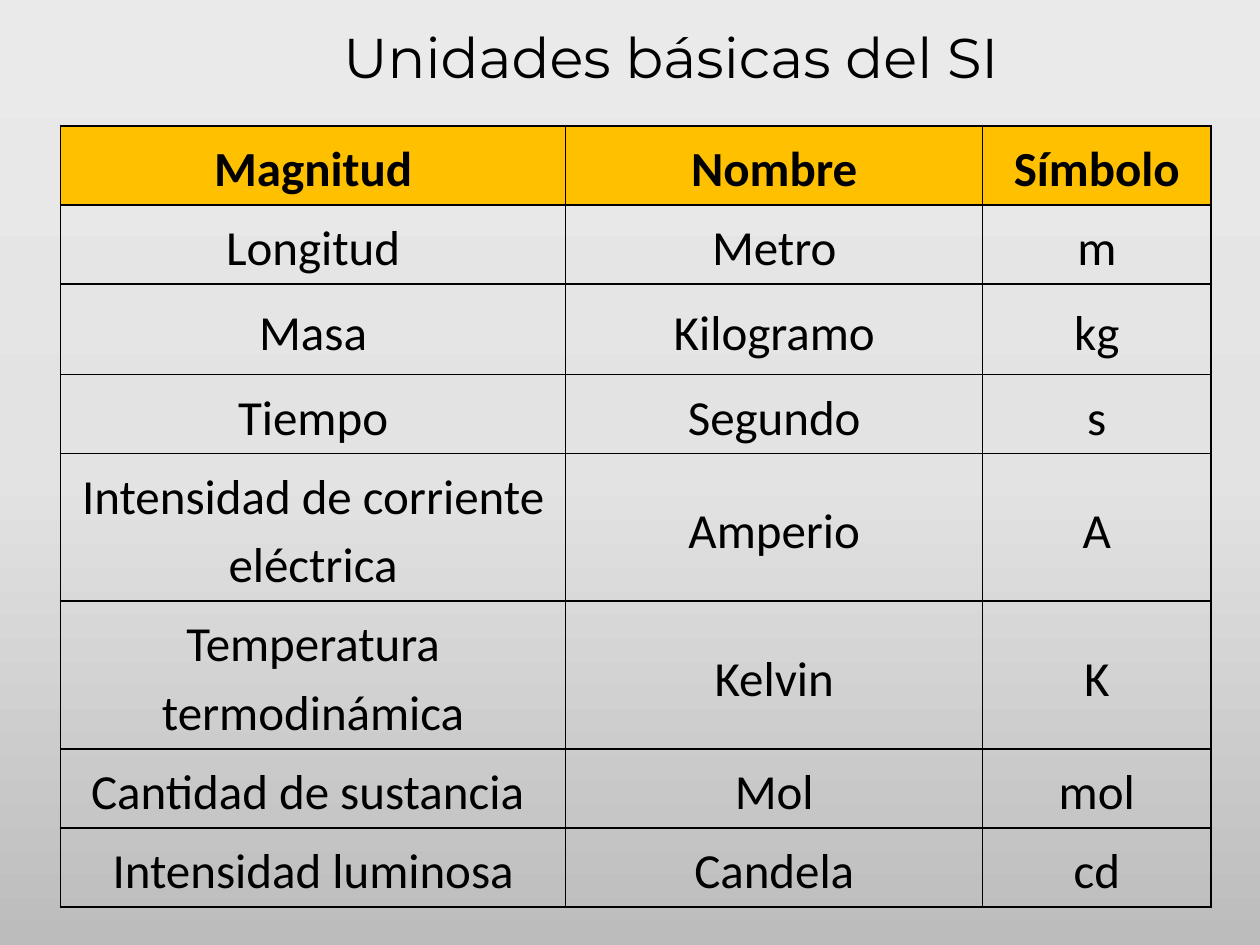
from copy import deepcopy
from typing import NamedTuple

from lxml.etree import SubElement
from pptx import Presentation
from pptx.dml.color import RGBColor
from pptx.enum.text import MSO_ANCHOR, PP_ALIGN
from pptx.oxml.ns import qn
from pptx.util import Inches, Pt

SLIDE_WIDTH, SLIDE_HEIGHT = Inches(10), Inches(7.5)
BLACK, AMBER = "000000", "FFC000"
BACKDROP = [(0, "EBEAEA"), (0.5, "E4E3E3"), (1, "BDBCBC")]
COLUMN_WIDTHS = [4.01, 3.31, 1.81]
SINGLE_ROW, TALL_ROW, DOUBLE_ROW = 0.62, 0.72, 1.16


class Unit(NamedTuple):
    quantity: str
    name: str
    symbol: str
    height: float = SINGLE_ROW


HEADING = Unit("Magnitud", "Nombre", "Símbolo")
UNITS = [
    Unit("Longitud", "Metro", "m"),
    Unit("Masa", "Kilogramo", "kg", TALL_ROW),
    Unit("Tiempo", "Segundo", "s"),
    Unit("Intensidad de corriente eléctrica", "Amperio", "A", DOUBLE_ROW),
    Unit("Temperatura termodinámica", "Kelvin", "K", DOUBLE_ROW),
    Unit("Cantidad de sustancia ", "Mol", "mol"),
    Unit("Intensidad luminosa", "Candela", "cd"),
]


def rgb(value: str) -> RGBColor:
    return RGBColor.from_string(value)


def paint_background(slide) -> None:
    fill = slide.background.fill
    fill.gradient()
    fill.gradient_angle = 270
    stop_list = next(slide.element.iter(qn("a:gsLst")))
    stop_list.append(deepcopy(stop_list[-1]))
    for stop, (position, color) in zip(fill.gradient_stops, BACKDROP):
        stop.position = position
        stop.color.rgb = rgb(color)


def style_text(paragraph, font_name: str, size: int, bold: bool = False) -> None:
    paragraph.alignment = PP_ALIGN.CENTER
    for run in paragraph.runs:
        run.font.name = font_name
        run.font.size = Pt(size)
        run.font.bold = bold
        run.font.color.rgb = rgb(BLACK)


def add_title(slide, title: str) -> None:
    box = slide.shapes.add_textbox(
        Inches(1.28), Inches(0.13), Inches(8.21), Inches(0.64)
    )
    box.text_frame.word_wrap = True
    box.text_frame.text = title
    style_text(box.text_frame.paragraphs[0], "Montserrat", 32)


def add_borders(cell) -> None:
    properties = cell._tc.get_or_add_tcPr()
    for side in ("lnL", "lnR", "lnT", "lnB"):
        line = SubElement(properties, qn(f"a:{side}"), w=str(Pt(1)))
        fill = SubElement(line, qn("a:solidFill"))
        SubElement(fill, qn("a:srgbClr"), val=BLACK)


def fill_cell(cell, text: str, is_heading: bool) -> None:
    cell.text_frame.text = text
    cell.vertical_anchor = MSO_ANCHOR.MIDDLE
    cell.margin_left = cell.margin_right = Inches(0.04)
    cell.margin_top = cell.margin_bottom = Inches(0.04)
    paragraph = cell.text_frame.paragraphs[0]
    paragraph.line_spacing = 1.15
    paragraph.space_after = Pt(10)
    style_text(paragraph, "Calibri", 28, is_heading)
    add_borders(cell)
    if is_heading:
        cell.fill.solid()
        cell.fill.fore_color.rgb = rgb(AMBER)
    else:
        cell.fill.background()


def add_unit_table(slide) -> None:
    rows = [HEADING, *UNITS]
    table = slide.shapes.add_table(
        len(rows), len(COLUMN_WIDTHS), Inches(0.48), Inches(1),
        Inches(sum(COLUMN_WIDTHS)), Inches(sum(unit.height for unit in rows)),
    ).table
    table.first_row = table.horz_banding = False
    for column, width in zip(table.columns, COLUMN_WIDTHS):
        column.width = Inches(width)
    for row, unit in zip(table.rows, rows):
        row.height = Inches(unit.height)
        for cell, text in zip(row.cells, (unit.quantity, unit.name, unit.symbol)):
            fill_cell(cell, text, unit is HEADING)


def main() -> None:
    presentation = Presentation()
    presentation.slide_width = SLIDE_WIDTH
    presentation.slide_height = SLIDE_HEIGHT
    slide = presentation.slides.add_slide(presentation.slide_layouts[6])
    paint_background(slide)
    add_unit_table(slide)
    add_title(slide, "Unidades básicas del SI ")
    presentation.save("out.pptx")


if __name__ == "__main__":
    main()
